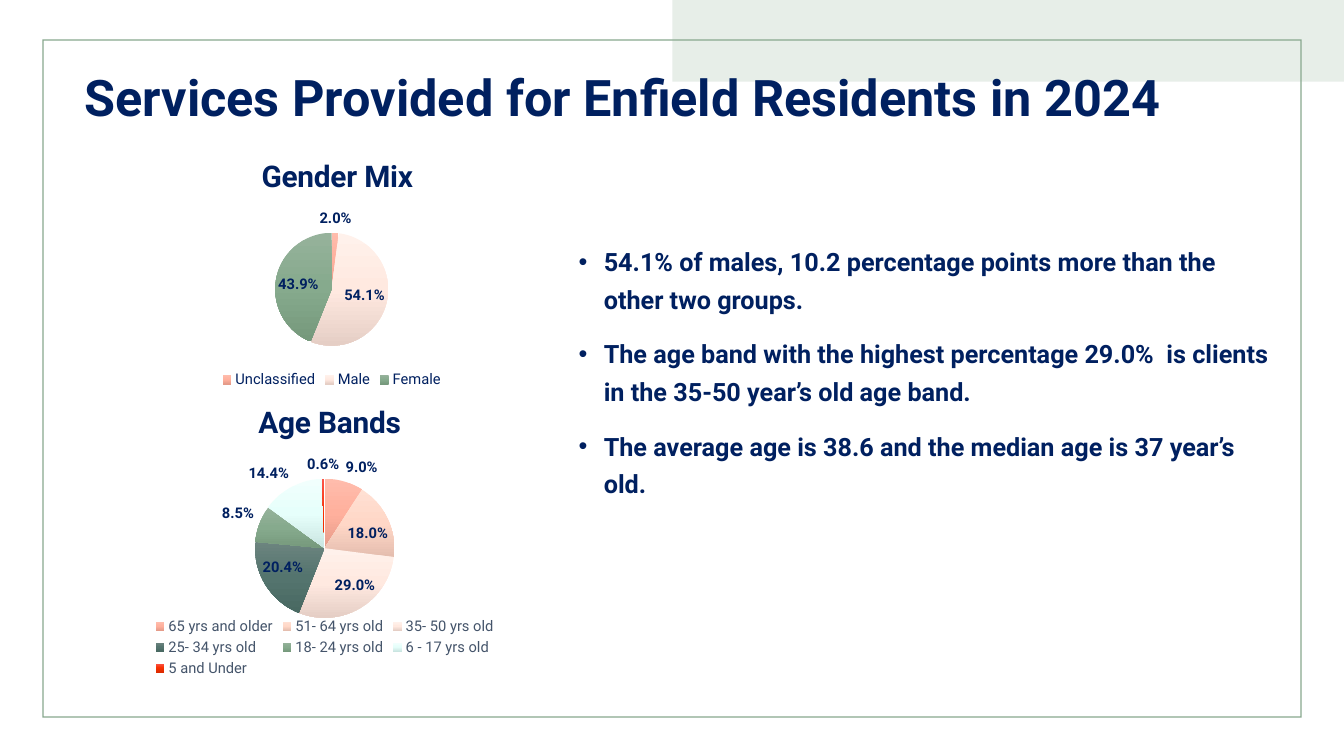
from copy import deepcopy

from lxml import etree
from pptx import Presentation
from pptx.chart.data import CategoryChartData
from pptx.dml.color import RGBColor
from pptx.enum.chart import XL_CHART_TYPE, XL_LABEL_POSITION, XL_LEGEND_POSITION
from pptx.enum.shapes import MSO_SHAPE
from pptx.enum.text import MSO_ANCHOR, MSO_AUTO_SIZE, PP_ALIGN
from pptx.oxml.ns import qn
from pptx.util import Inches, Pt

PIE = XL_CHART_TYPE.PIE
BEST_FIT = XL_LABEL_POSITION.BEST_FIT
LEGEND_BOTTOM = XL_LEGEND_POSITION.BOTTOM
RECTANGLE, FRAME = MSO_SHAPE.RECTANGLE, MSO_SHAPE.FRAME
MIDDLE = MSO_ANCHOR.MIDDLE
NO_AUTOFIT = MSO_AUTO_SIZE.NONE
LEFT = PP_ALIGN.LEFT

FONT = "Roboto"
NAVY, SLATE = "002060", "44546A"
SAGE, PALE_SAGE = "88A88E", "E7EEE8"

# Slice gradients, top to bottom
SALMON = ("FFBCAC", "FFB09D", "E59B89")
PEACH = ("FFE0D3", "FFD7C7", "E5BEAF")
BLUSH = ("FFF1EB", "FFE9E0", "E5CEC5")
TEAL = ("6C847F", "54746E", "496962")
GREEN = ("96B29B", "86AA8D", "76997C")
MINT = ("F1FFFD", "E6FFFB", "CAE5E1")
RED = ("FC564B", "F73000", "DC2B00")

GENDER_MIX = [("Unclassified", 0.02, SALMON), ("Male", 0.541, BLUSH),
              ("Female", 0.439, GREEN)]
AGE_BANDS = [("65 yrs and older", 0.09, SALMON), ("51- 64 yrs old", 0.18, PEACH),
             ("35- 50 yrs old", 0.29, BLUSH), ("25- 34 yrs old", 0.204, TEAL),
             ("18- 24 yrs old", 0.085, GREEN), ("6 - 17 yrs old", 0.144, MINT),
             ("5 and Under", 0.006, RED)]
FINDINGS = [
    "54.1% of males, 10.2 percentage points more than the other two groups.",
    "The age band with the highest percentage 29.0%  is clients in the 35-50 year’s old age band.",
    "The average age is 38.6 and the median age is 37 year’s old.",
]


def rgb(value):
    return RGBColor.from_string(value)


def set_font(font, size, color, bold):
    font.name = FONT
    font.size = Pt(size)
    font.bold = bold
    font.color.rgb = rgb(color)


def add_backdrop(slide, box, preset, color):
    backdrop = slide.shapes.add_shape(preset, *map(Inches, box))
    backdrop.shadow.inherit = False
    backdrop.fill.solid()
    backdrop.fill.fore_color.rgb = rgb(color)
    backdrop.line.fill.background()
    return backdrop


def add_heading(slide, box, text):
    heading = slide.shapes.title
    heading.left, heading.top, heading.width, heading.height = map(Inches, box)
    # Bring the heading in front of the backdrop
    slide.shapes._spTree.append(heading._element)
    frame = heading.text_frame
    frame.text = text
    frame.auto_size = NO_AUTOFIT
    frame.vertical_anchor = MIDDLE
    paragraph = frame.paragraphs[0]
    paragraph.alignment = LEFT
    set_font(paragraph.font, 36, NAVY, True)


def set_layout(parent, index, **fractions):
    """Give a chart part a fixed place, as fractions of the chart."""
    for old in parent.findall(qn("c:layout")):
        parent.remove(old)
    layout = etree.Element(qn("c:layout"))
    parent.insert(index, layout)
    manual = etree.SubElement(layout, qn("c:manualLayout"))
    if "w" in fractions:
        etree.SubElement(manual, qn("c:layoutTarget"), val="inner")
    for axis in "xy":
        etree.SubElement(manual, qn(f"c:{axis}Mode"), val="edge")
    for name, fraction in fractions.items():
        etree.SubElement(manual, qn(f"c:{name}"), val=f"{fraction:.4f}")


def add_pie(slide, box, title, title_width, slices, diameter, legend_color):
    width, height = box[2:]
    data = CategoryChartData(number_format="0.0%")
    data.categories = [name for name, _, _ in slices]
    data.add_series("Series 1", [share for _, share, _ in slices])
    chart = slide.shapes.add_chart(PIE, *map(Inches, box), data).chart
    set_font(chart.font, 10, "000000", False)

    # Title
    chart.has_title = True
    caption = chart.chart_title
    caption.include_in_layout = False
    caption.text_frame.text = title
    set_font(caption.text_frame.paragraphs[0].font, 21.3, NAVY, True)
    set_layout(caption._element, 1,
               x=(width - title_width) / 2 / width, y=0.19 / height)

    # Legend
    chart.has_legend = True
    chart.legend.position = LEGEND_BOTTOM
    chart.legend.include_in_layout = False
    set_font(chart.legend.font, 10.5, legend_color, False)

    # Slices with three-stop gradients
    plot = chart.plots[0]
    plot.vary_by_categories = True
    points = plot.series[0].points
    for index in range(len(slices)):
        fill = points[index].format.fill
        fill.gradient()
        fill.gradient_angle = 270
    for stop_list in chart._chartSpace.iter(qn("a:gsLst")):
        stop_list.insert(1, deepcopy(stop_list[0]))
    for index, (_, _, colors) in enumerate(slices):
        stops = points[index].format.fill.gradient_stops
        for stop, color, position in zip(stops, colors, (0, 0.5, 1)):
            stop.color.rgb = rgb(color)
            stop.position = position

    # Percentages
    plot.has_data_labels = True
    labels = plot.data_labels
    labels.show_value = True
    labels.show_percentage = False
    labels.number_format = "0.0%"
    labels.number_format_is_linked = False
    labels.position = BEST_FIT
    set_font(labels.font, 10.5, NAVY, True)

    # Circle centred across the chart
    set_layout(chart._chartSpace.chart.plotArea, 0,
               x=(width - diameter) / 2 / width, y=1 / height,
               w=diameter / width, h=diameter / height)


def add_findings(slide, box, findings):
    frame = slide.shapes.add_textbox(*map(Inches, box)).text_frame
    frame.word_wrap = True
    frame.vertical_anchor = MIDDLE
    for index, finding in enumerate(findings):
        paragraph = frame.add_paragraph() if index else frame.paragraphs[0]
        paragraph.text = finding
        paragraph.line_spacing = 1.25
        paragraph.space_after = Pt(12)
        properties = paragraph._p.get_or_add_pPr()
        properties.set("marL", str(Inches(0.25)))
        properties.set("indent", str(-Inches(0.25)))
        etree.SubElement(properties, qn("a:buFont"), typeface="Arial")
        etree.SubElement(properties, qn("a:buChar"), char="•")
        set_font(paragraph.font, 18, NAVY, True)


def main():
    deck = Presentation()
    deck.slide_width, deck.slide_height = Inches(13.33), Inches(7.5)
    slide = deck.slides.add_slide(deck.slide_layouts[5])

    add_backdrop(slide, (6.67, 0, 6.67, 0.81), RECTANGLE, PALE_SAGE)
    border = add_backdrop(slide, (0.42, 0.39, 12.49, 6.73), FRAME, SAGE)
    border.adjustments[0] = 0.002

    add_heading(slide, (0.74, 0.6, 11.8, 0.71),
                "Services Provided for Enfield Residents in 2024")
    add_findings(slide, (5.64, 1.58, 7.11, 4.16), FINDINGS)
    add_pie(slide, (0.79, 1.31, 5, 2.58), "Gender Mix", 1.5, GENDER_MIX, 1.12, NAVY)
    add_pie(slide, (0.72, 3.75, 5, 3), "Age Bands", 1.42, AGE_BANDS, 1.38, SLATE)

    deck.save("out.pptx")


if __name__ == "__main__":
    main()
